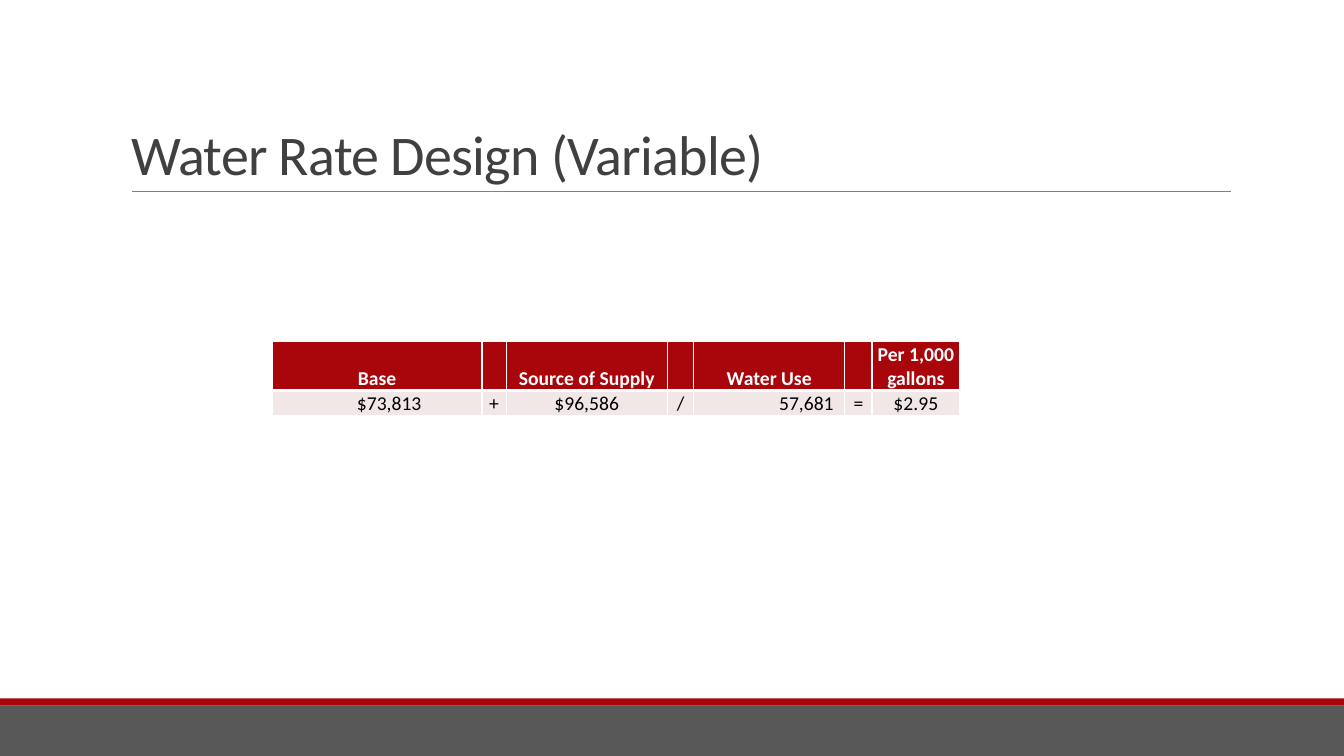
from lxml import etree
from pptx import Presentation
from pptx.dml.color import RGBColor
from pptx.enum.shapes import MSO_CONNECTOR, MSO_SHAPE
from pptx.enum.text import MSO_ANCHOR, MSO_AUTO_SIZE, PP_ALIGN
from pptx.oxml.ns import qn
from pptx.util import Inches, Pt

RECTANGLE = MSO_SHAPE.RECTANGLE
STRAIGHT = MSO_CONNECTOR.STRAIGHT
BOTTOM = MSO_ANCHOR.BOTTOM
LEFT, CENTER, RIGHT = PP_ALIGN.LEFT, PP_ALIGN.CENTER, PP_ALIGN.RIGHT
NO_AUTOFIT = MSO_AUTO_SIZE.NONE

FONT = "Calibri"
TITLE_ONLY = 5
COLORS = {
    "red": "A9060B",
    "footer": "585858",
    "rule": "808080",
    "title": "404040",
    "white": "FFFFFF",
    "black": "000000",
    "pale": "F1E7E7",
}
COLUMN_WIDTHS = [2.08, 0.24, 1.6, 0.26, 1.5, 0.27, 0.87]
ROW_HEIGHTS = [0.48, 0.25]
HEADINGS = ["Base", "", "Source of Supply", "", "Water Use", "", "Per 1,000 gallons"]
VALUES = ["$73,813", "+", "$96,586", "/", "57,681", "=", "$2.95"]
BASE_COLUMN, USE_COLUMN = 0, 4


def color(name):
    """Return the named colour."""
    return RGBColor.from_string(COLORS[name])


def set_font(para, size, color_name, bold=False):
    """Format the text of a paragraph."""
    para.font.name = FONT
    para.font.size = Pt(size)
    para.font.bold = bold
    para.font.color.rgb = color(color_name)


def add_bar(page, top, height, color_name):
    """Add a full-width band."""
    bar = page.shapes.add_shape(
        RECTANGLE, 0, Inches(top), Inches(13.33), Inches(height))
    bar.shadow.inherit = False
    bar.fill.solid()
    bar.fill.fore_color.rgb = color(color_name)
    bar.line.fill.background()


def add_rule(page, left, right, top):
    """Add the thin line below the title."""
    rule = page.shapes.add_connector(
        STRAIGHT, Inches(left), Inches(top), Inches(right), Inches(top))
    rule.line.color.rgb = color("rule")
    rule.line.width = Pt(0.5)
    etree.SubElement(rule._element.spPr, qn("a:effectLst"))


def set_title(page, text):
    """Place and format the title."""
    title = page.shapes.title
    title.left, title.top = Inches(1.2), Inches(0.31)
    title.width, title.height = Inches(11), Inches(1.59)
    frame = title.text_frame
    frame.text = text
    frame.auto_size = NO_AUTOFIT
    frame.vertical_anchor = BOTTOM
    para = frame.paragraphs[0]
    para.alignment = LEFT
    para.line_spacing = 0.85
    set_font(para, 40, "title")
    para.runs[0].font._element.set("spc", "-50")


def set_borders(cell, bottom_width):
    """Draw white borders around a cell."""
    properties = cell._tc.get_or_add_tcPr()
    widths = {"a:lnL": 1, "a:lnR": 1, "a:lnT": 1, "a:lnB": bottom_width}
    for position, (tag, width) in enumerate(widths.items()):
        border = etree.Element(qn(tag), w=str(Pt(width)))
        fill = etree.SubElement(border, qn("a:solidFill"))
        etree.SubElement(fill, qn("a:srgbClr"), val=COLORS["white"])
        properties.insert(position, border)


def fill_cell(cell, text, header):
    """Write and format one cell."""
    cell.text = text
    cell.vertical_anchor = BOTTOM
    cell.margin_left = cell.margin_right = cell.margin_top = Inches(0.01)
    cell.margin_bottom = 0
    cell.fill.solid()
    cell.fill.fore_color.rgb = color("red" if header else "pale")
    para = cell.text_frame.paragraphs[0]
    para.alignment = CENTER
    set_font(para, 14, "white" if header else "black", header)
    set_borders(cell, 3 if header else 1)


def add_rate_table(page):
    """Add the rate calculation table."""
    table = page.shapes.add_table(
        len(ROW_HEIGHTS), len(COLUMN_WIDTHS), Inches(2.7), Inches(3.39),
        Inches(sum(COLUMN_WIDTHS)), Inches(sum(ROW_HEIGHTS))).table
    for column, width in zip(table.columns, COLUMN_WIDTHS):
        column.width = Inches(width)
    for row, height in zip(table.rows, ROW_HEIGHTS):
        row.height = Inches(height)
    for row_index, texts in enumerate([HEADINGS, VALUES]):
        for column_index, text in enumerate(texts):
            fill_cell(table.cell(row_index, column_index), text, row_index == 0)
    base = table.cell(1, BASE_COLUMN)
    base.margin_left = Inches(0.84)
    base.text_frame.paragraphs[0].alignment = LEFT
    use = table.cell(1, USE_COLUMN)
    use.margin_right = Inches(0.11)
    use.text_frame.paragraphs[0].alignment = RIGHT


def main():
    """Build the slide."""
    deck = Presentation()
    deck.slide_width, deck.slide_height = Inches(13.33), Inches(7.5)
    page = deck.slides.add_slide(deck.slide_layouts[TITLE_ONLY])
    add_bar(page, 7, 0.5, "footer")
    add_bar(page, 6.93, 0.07, "red")
    add_rule(page, 1.31, 12.21, 1.9)
    set_title(page, "Water Rate Design (Variable)")
    add_rate_table(page)
    deck.save("out.pptx")


if __name__ == "__main__":
    main()
